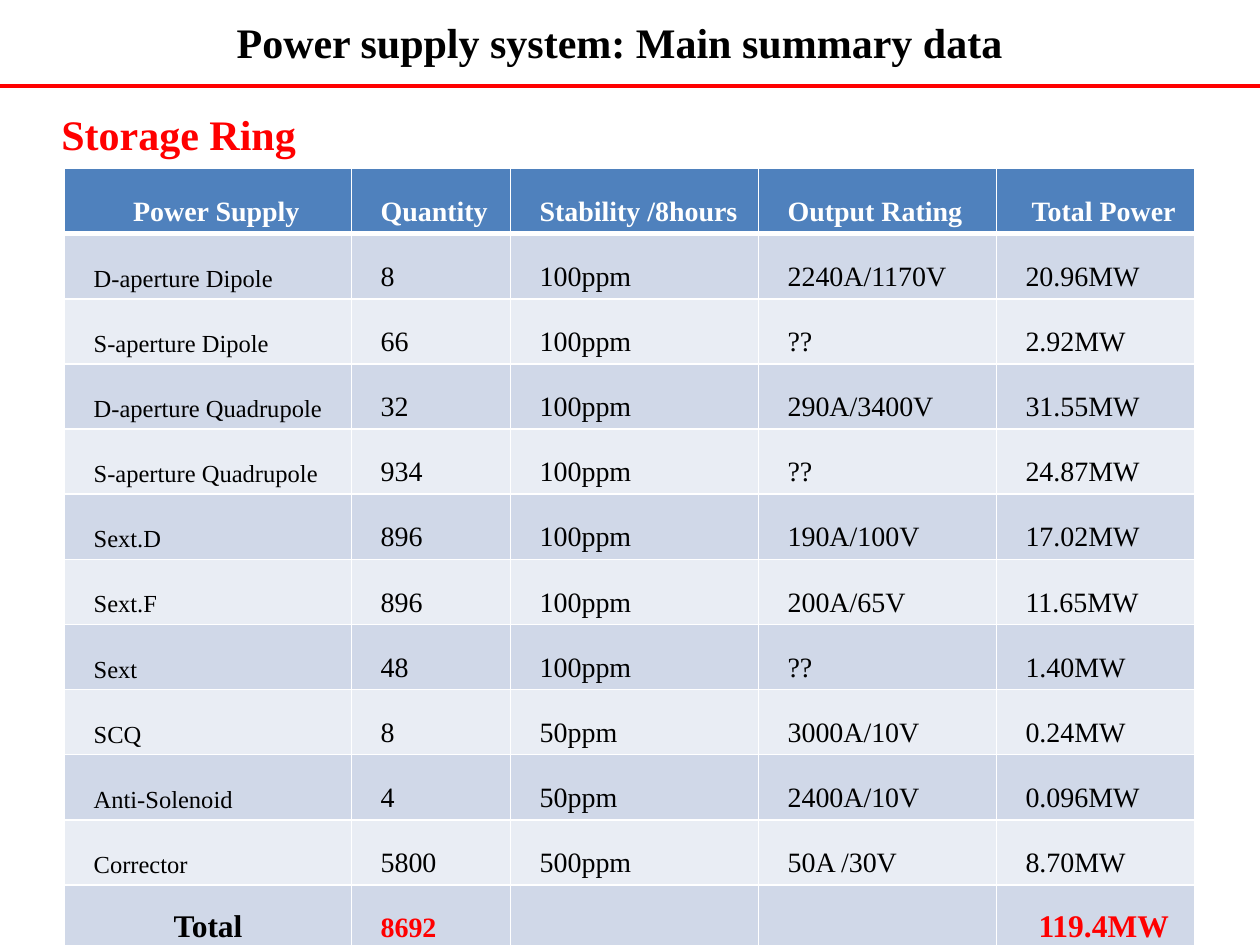
from dataclasses import dataclass

from lxml import etree
from pptx import Presentation
from pptx.dml.color import RGBColor
from pptx.enum import shapes, text
from pptx.oxml import ns
from pptx.util import Pt


@dataclass(frozen=True)
class Theme:
    font: str = "Times New Roman"
    black: str = "000000"
    white: str = "FFFFFF"
    red: str = "FF0000"
    header_fill: str = "4F81BD"
    bands: tuple = ("D0D8E8", "E9EDF4")
    heading: int = 24
    total: int = 18
    value: int = 16
    name: int = 14


THEME = Theme()
LEFT, CENTER = text.PP_ALIGN.LEFT, text.PP_ALIGN.CENTER
RING_SPACING = {"line_spacing": Pt(30), "space_after": Pt(6)}
CELL_INDENT = Pt(9.4)
ROW_HEIGHT = 37.2
COLUMN_WIDTHS = (164, 90.9, 141.7, 136, 113.1)
HEADER = ("Power Supply", "Quantity", "Stability /8hours", "Output Rating", "Total Power")
SUPPLIES = (
    ("D-aperture Dipole", "8", "100ppm", "2240A/1170V", "20.96MW"),
    ("S-aperture Dipole", "66", "100ppm", "??", "2.92MW"),
    ("D-aperture Quadrupole", "32", "100ppm", "290A/3400V", "31.55MW"),
    ("S-aperture Quadrupole", "934", "100ppm", "??", "24.87MW"),
    ("Sext.D", "896", "100ppm", "190A/100V", "17.02MW"),
    ("Sext.F", "896", "100ppm", "200A/65V", "11.65MW"),
    ("Sext", "48", "100ppm", "??", "1.40MW"),
    ("SCQ", "8", "50ppm", "3000A/10V", "0.24MW"),
    ("Anti-Solenoid", "4", "50ppm", "2400A/10V", "0.096MW"),
    ("Corrector", "5800", "500ppm", "50A /30V", "8.70MW"),
)
TOTAL = ("Total", "8692", "", "", "119.4MW")


def apply(target, values):
    for name, value in values.items():
        setattr(target, name, value)


def write(frame, words, size, color, bold=False, **para_format):
    para = frame.paragraphs[0]
    apply(para, para_format)
    span = para.add_run()
    span.text = words
    apply(span.font, {"name": THEME.font, "size": Pt(size), "bold": bold})
    span.font.color.rgb = RGBColor.from_string(color)
    return para


def place(box, left, top, width, height):
    apply(box, {"left": Pt(left), "top": Pt(top), "width": Pt(width), "height": Pt(height)})


def add_title(page, words):
    title = page.shapes.title
    place(title, 28, 0, 652, 48.2)
    title.text_frame.vertical_anchor = text.MSO_ANCHOR.MIDDLE
    write(title.text_frame, words, THEME.heading, THEME.black, True, alignment=CENTER)


def add_subtitle(page, words):
    box = page.shapes.add_textbox(Pt(28), Pt(57), Pt(652), Pt(425.5))
    box.text_frame.word_wrap = True
    write(box.text_frame, words, THEME.heading, THEME.red, True, **RING_SPACING)


def add_rule(page, top, width):
    rule = page.shapes.add_connector(
        shapes.MSO_CONNECTOR.STRAIGHT, Pt(0), Pt(top), Pt(width), Pt(top))
    rule.line.color.rgb = RGBColor.from_string(THEME.red)
    rule.line.width = Pt(2.25)
    etree.SubElement(rule._element.spPr, ns.qn("a:effectLst"))


def set_borders(cell, **widths):
    """Draw white borders; the schema wants them ahead of the cell's fill."""
    properties = cell._tc.get_or_add_tcPr()
    for index, side in enumerate("LRTB"):
        line = etree.Element(ns.qn(f"a:ln{side}"), w=str(Pt(widths.get(side, 1))))
        fill = etree.SubElement(line, ns.qn("a:solidFill"))
        etree.SubElement(fill, ns.qn("a:srgbClr"), val=THEME.white)
        properties.insert(index, line)


def cell_style(row, column, last_row):
    """Return size, colour, bold and alignment for a cell."""
    outer = column in (0, len(HEADER) - 1)
    alignment = CENTER if outer and row in (0, last_row) else LEFT
    if row == 0:
        return THEME.value, THEME.white, True, alignment
    if row == last_row:
        size = THEME.total if outer else THEME.value
        return size, THEME.black if column == 0 else THEME.red, True, alignment
    return THEME.name if column == 0 else THEME.value, THEME.black, False, alignment


def add_supply_table(page, rows):
    frame = page.shapes.add_table(
        len(rows), len(HEADER), Pt(36.9), Pt(96.3),
        Pt(sum(COLUMN_WIDTHS)), Pt(ROW_HEIGHT * len(rows)))
    table = frame.table
    last_row = len(rows) - 1
    for column, width in zip(table.columns, COLUMN_WIDTHS):
        column.width = Pt(width)
    for r, values in enumerate(rows):
        table.rows[r].height = Pt(ROW_HEIGHT)
        fill = THEME.bands[(r - 1) % 2] if r else THEME.header_fill
        for c, words in enumerate(values):
            cell = table.cell(r, c)
            cell.vertical_anchor = text.MSO_ANCHOR.MIDDLE
            cell.fill.solid()
            cell.fill.fore_color.rgb = RGBColor.from_string(fill)
            set_borders(cell, T=3 if r == 1 else 1, B=1 if r else 3)
            if not words:
                continue
            size, color, bold, alignment = cell_style(r, c, last_row)
            para = write(cell.text_frame, words, size, color, bold,
                         alignment=alignment, **RING_SPACING)
            if (r, c) != (last_row, 0):
                para._p.get_or_add_pPr().set("marL", str(CELL_INDENT))


def main():
    deck = Presentation()
    apply(deck, {"slide_width": Pt(720), "slide_height": Pt(540)})
    page = deck.slides.add_slide(deck.slide_layouts.get_by_name("Title Only"))
    add_title(page, "Power supply system: Main summary data")
    add_subtitle(page, "Storage Ring")
    add_rule(page, 49, 720)
    add_supply_table(page, (HEADER, *SUPPLIES, TOTAL))
    deck.save("out.pptx")


if __name__ == "__main__":
    main()
